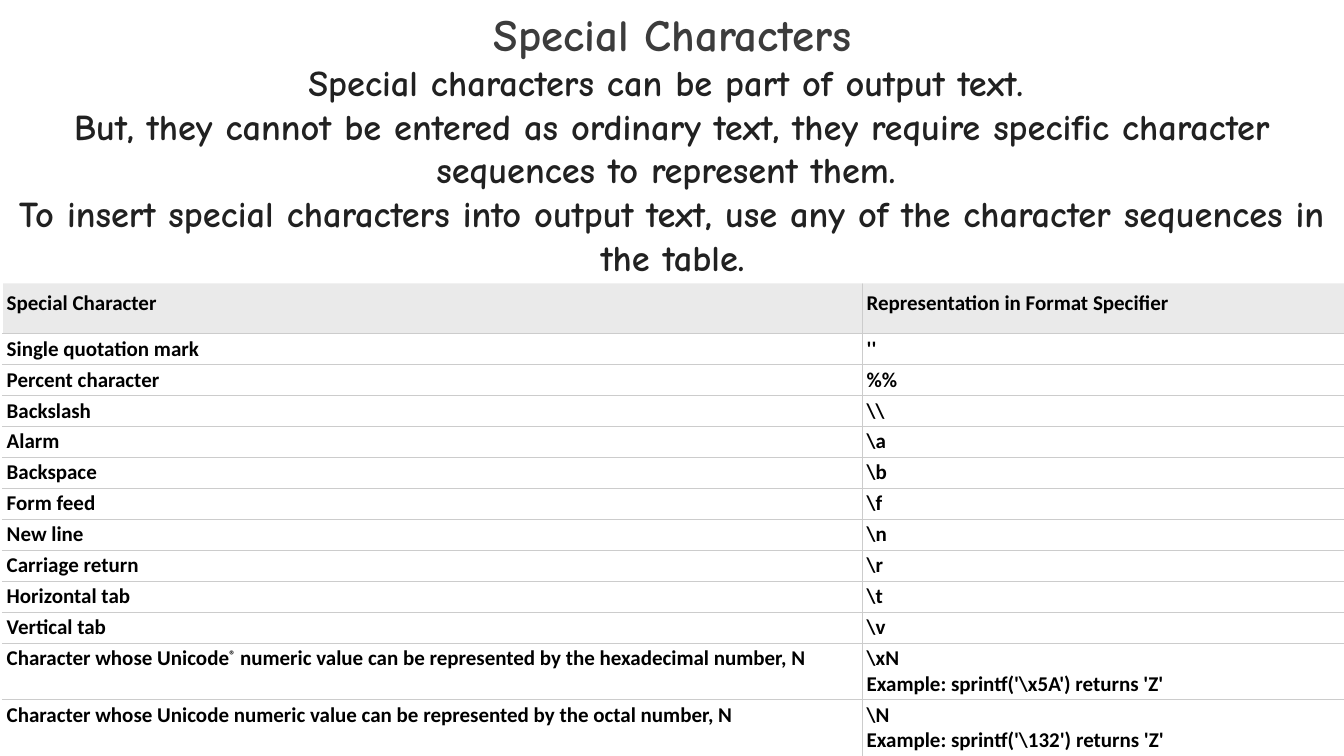
import lxml.etree
import pptx
import pptx.dml.color
import pptx.enum.text
import pptx.oxml.ns
import pptx.util

Cm = pptx.util.Cm
Pt = pptx.util.Pt
qn = pptx.oxml.ns.qn
MIDDLE = pptx.enum.text.MSO_ANCHOR.MIDDLE
TOP = pptx.enum.text.MSO_ANCHOR.TOP

HEADING = "Special Characters"
INTRO = [
    "Special characters can be part of output text. ",
    "But, they cannot be entered as ordinary text, they require specific "
    "character sequences to represent them. ",
    "To insert special characters into output text, use any of the character "
    "sequences in the table.",
]
ROWS = [
    ("Special Character", "Representation in Format Specifier"),
    ("Single quotation mark", "''"),
    ("Percent character", "%%"),
    ("Backslash", "\\\\"),
    ("Alarm", "\\a"),
    ("Backspace", "\\b"),
    ("Form feed", "\\f"),
    ("New line", "\\n"),
    ("Carriage return", "\\r"),
    ("Horizontal tab", "\\t"),
    ("Vertical tab", "\\v"),
    ("Character whose Unicode® numeric value can be represented by the "
     "hexadecimal number, N",
     "\\xN\nExample: sprintf('\\x5A') returns 'Z'"),
    ("Character whose Unicode numeric value can be represented by the "
     "octal number, N",
     "\\N\nExample: sprintf('\\132') returns 'Z'"),
]


def rgb(value):
    return pptx.dml.color.RGBColor.from_string(value)


class Deck:
    title_font = "Comic Neue"
    table_font = "Calibri"
    paper = "FFFFFF"
    header_fill = "EAEAEA"
    rule = "CCCCCC"

    def __init__(self, width, height):
        self.prs = pptx.Presentation()
        self.prs.slide_width = Cm(width)
        self.prs.slide_height = Cm(height)
        self.s = self.prs.slides.add_slide(self.prs.slide_layouts[5])

    def format_runs(self, p, font, size, color):
        for r in p.runs:
            r.font.name = font
            r.font.size = Pt(size)
            r.font.bold = True
            r.font.color.rgb = rgb(color)

    def title(self, left, top, width, height, heading, lines):
        sp = self.s.shapes.title
        sp.left, sp.top, sp.width, sp.height = map(Cm, (left, top, width, height))
        sp.fill.solid()
        sp.fill.fore_color.rgb = rgb(self.paper)
        tf = sp.text_frame
        tf.text = "\n".join([heading, *lines])
        tf.word_wrap = True
        tf.auto_size = pptx.enum.text.MSO_AUTO_SIZE.SHAPE_TO_FIT_TEXT
        tf.vertical_anchor = MIDDLE
        tf.margin_left = tf.margin_right = tf.margin_top = 0
        tf.margin_bottom = Cm(0.08)
        for i, p in enumerate(tf.paragraphs):
            p.alignment = pptx.enum.text.PP_ALIGN.CENTER
            size, color = (26, "212121") if i else (32, "3C3C3C")
            self.format_runs(p, self.title_font, size, color)
        self.s.shapes._spTree.append(sp._element)

    def borders(self, cell, sides):
        tc_pr = cell._tc.get_or_add_tcPr()
        for side in sides:
            ln = lxml.etree.SubElement(tc_pr, qn("a:ln" + side), w=str(Pt(0.75)))
            fill = lxml.etree.SubElement(ln, qn("a:solidFill"))
            lxml.etree.SubElement(fill, qn("a:srgbClr"), val=self.rule)

    def raise_mark(self, p, mark):
        before, found, after = p.text.partition(mark)
        if found:
            p.text = before
            p.add_run().text = mark
            p.add_run().text = after
            p.runs[1].font._element.set("baseline", "30000")

    def cell(self, cell, text, header, sides):
        self.borders(cell, sides)
        cell.fill.solid()
        cell.fill.fore_color.rgb = rgb(self.header_fill if header else self.paper)
        cell.vertical_anchor = MIDDLE if header else TOP
        cell.margin_left = cell.margin_right = Cm(0.11)
        cell.margin_top = cell.margin_bottom = Cm(0.13 if header else 0.06)
        cell.text_frame.text = text
        for p in cell.text_frame.paragraphs:
            self.raise_mark(p, "®")
            self.format_runs(p, self.table_font, 15, "000000")

    def table(self, left, top, widths, heights, rows):
        table = self.s.shapes.add_table(
            len(rows), len(widths), Cm(left), Cm(top),
            Cm(sum(widths)), Cm(sum(heights))).table
        table.first_row = table.horz_banding = False
        for column, width in zip(table.columns, widths):
            column.width = Cm(width)
        for i, (row, height) in enumerate(zip(table.rows, heights)):
            row.height = Cm(height)
            for j, text in enumerate(rows[i]):
                sides = "LRTB" if j else "RTB"
                self.cell(row.cells[j], text, i == 0, sides)


def main():
    deck = Deck(33.87, 19.05)
    heights = [1.55] + [0.78] * 10 + [1.42] * 2
    deck.table(0.06, 6.86, [21.67, 12.19], heights, ROWS)
    deck.title(0.02, 0.12, 33.87, 7.02, HEADING, INTRO)
    deck.prs.save("out.pptx")


if __name__ == "__main__":
    main()
